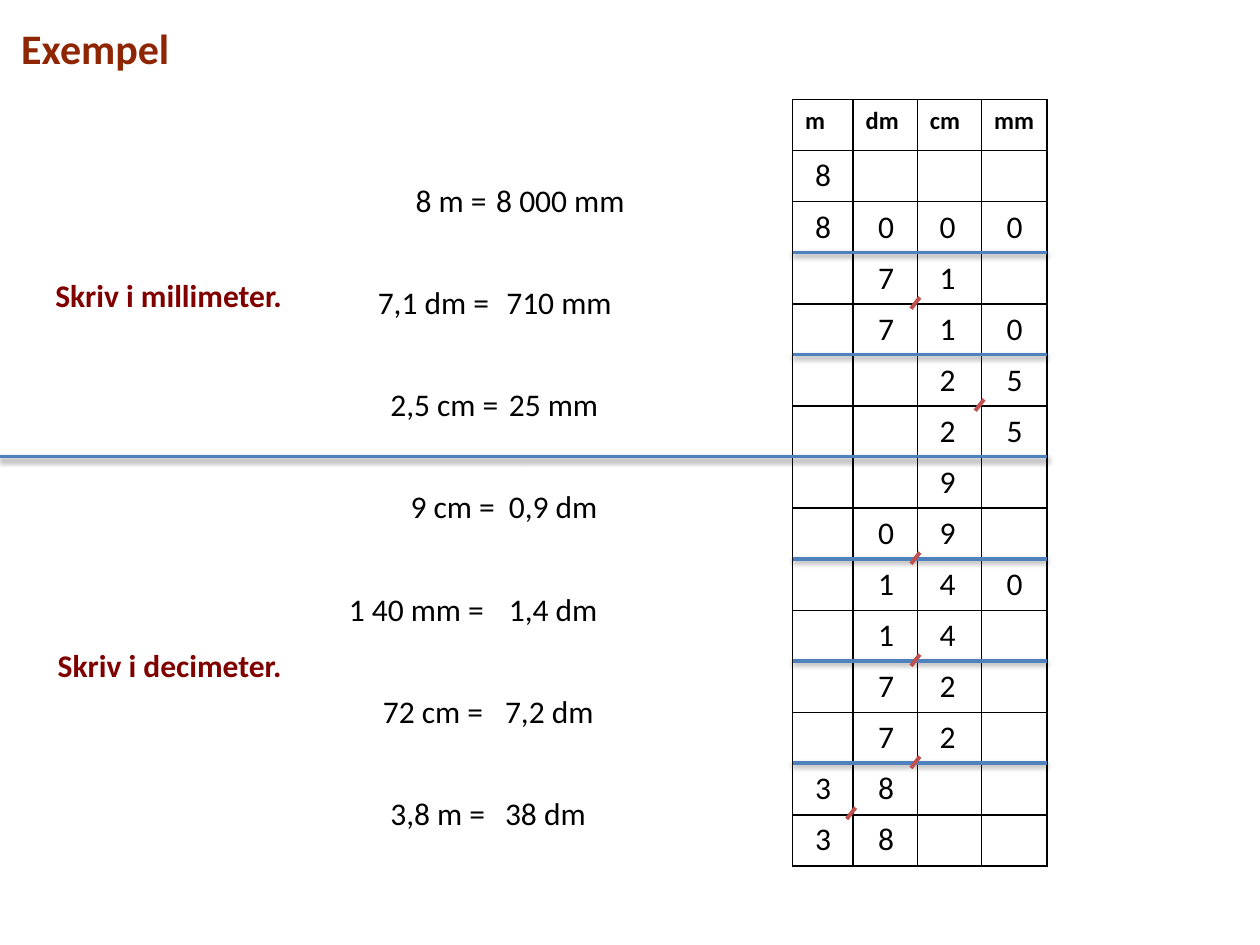
from itertools import accumulate

from pptx import Presentation
from pptx.dml.color import RGBColor
from pptx.enum.shapes import MSO_CONNECTOR as CONNECTOR
from pptx.enum.text import MSO_AUTO_SIZE as AUTO_SIZE
from pptx.oxml import parse_xml
from pptx.oxml.ns import nsdecls
from pptx.util import Inches, Pt

FONT = "Calibri"
BLACK, WHITE, BLUE, RED = "000000", "FFFFFF", "4F81BD", "C0504D"
TITLE_COLOR, TASK_COLOR = "8E2503", "800000"
UNITS = ["m", "dm", "cm", "mm"]
COLUMN_WIDTHS = [0.48, 0.51, 0.51, 0.52]
DIGIT_OFFSETS = [0.08, 0.58, 1.07, 1.6]
ROW_HEIGHT = 0.405
DIGIT_ROWS = ["8   ", "8000", " 71 ", " 710", "  25", "  25", "  9 ",
              " 09 ", " 140", " 14 ", " 72 ", " 72 ", "38  ", "38  "]
COMMAS = [(4, 2), (6, 3), (9, 2), (11, 2), (13, 2), (14, 1)]
SEPARATOR_ROWS = [3, 5, 7, 9, 11, 13]
MIDDLE_ROW = 7
EQUATION_STEP = 0.81
EQUATIONS = [
    ("8 m =", 0.53, 0.8, "8 000 mm", 1.17, 1.23),
    ("7,1 dm =", 0.23, 1.09, "710 mm", 1.25, 1.05),
    ("2,5 cm =", 0.33, 1.07, "25 mm", 1.27, 0.92),
    ("9 cm =", 0.49, 0.88, "0,9 dm", 1.27, 0.91),
    ("1 40 mm =", 0, 1.29, "1,4 dm", 1.27, 0.91),
    ("72 cm =", 0.27, 1.01, "7,2 dm", 1.24, 0.91),
    ("3,8 m =", 0.33, 0.96, "38 dm", 1.24, 0.85),
]


def color(hex_string):
    """Turn a hex string into a colour."""
    return RGBColor.from_string(hex_string)


def write(paragraph, text, size=18, bold=False, font_color=BLACK):
    """Add a formatted run to a paragraph."""
    run = paragraph.add_run()
    run.text = text
    formats = {"name": FONT, "size": Pt(size), "bold": bold}
    for name, value in formats.items():
        setattr(run.font, name, value)
    run.font.color.rgb = color(font_color)


def add_text(slide, text, left, top, width, height=0.4, wrap=False, **style):
    """Place one line of text."""
    box = slide.shapes.add_textbox(*map(Inches, (left, top, width, height)))
    frame = box.text_frame
    formats = {"word_wrap": wrap, "auto_size": AUTO_SIZE.SHAPE_TO_FIT_TEXT}
    for name, value in formats.items():
        setattr(frame, name, value)
    write(frame.paragraphs[0], text, **style)


def add_line(slide, start, end, line_color, width, shadow=False):
    """Draw a straight line, with a soft shadow below it if asked."""
    line = slide.shapes.add_connector(
        CONNECTOR.STRAIGHT, *map(Inches, (*start, *end)))
    line.line.color.rgb = color(line_color)
    line.line.width = Pt(width)
    effect = (
        '<a:outerShdw blurRad="40000" dist="20000" dir="5400000" rotWithShape="0">'
        '<a:srgbClr val="000000"><a:alpha val="38000"/></a:srgbClr>'
        '</a:outerShdw>') if shadow else ""
    properties = line._element.spPr
    properties.append(parse_xml(
        f'<a:effectLst {nsdecls("a")}>{effect}</a:effectLst>'))


def format_cell(cell):
    """Give a cell a white fill and thin black borders."""
    properties = cell._tc.get_or_add_tcPr()
    for side in ("lnL", "lnR", "lnT", "lnB"):
        properties.append(parse_xml(
            f'<a:{side} {nsdecls("a")} w="12700"><a:solidFill>'
            f'<a:srgbClr val="{BLACK}"/></a:solidFill></a:{side}>'))
    cell.fill.solid()
    cell.fill.fore_color.rgb = color(WHITE)


def add_unit_table(slide, left, top, width):
    """Draw the empty grid with its unit headings."""
    row_count = len(DIGIT_ROWS) + 1
    frame = slide.shapes.add_table(
        row_count, len(UNITS), Inches(left), Inches(top),
        Inches(width), Inches(row_count * ROW_HEIGHT))
    table = frame.table
    for column, column_width in zip(table.columns, COLUMN_WIDTHS):
        column.width = Inches(column_width)
    for row in table.rows:
        row.height = Inches(ROW_HEIGHT)
    for cell in table.iter_cells():
        format_cell(cell)
    for cell, unit in zip(table.rows[0].cells, UNITS):
        write(cell.text_frame.paragraphs[0], unit, size=14, bold=True)


def add_unit_marks(slide, left, top, width):
    """Place the separators, decimal commas and digits on the grid."""
    edges = [0, *accumulate(COLUMN_WIDTHS)]
    for row in SEPARATOR_ROWS:
        start = 0 if row == MIDDLE_ROW else left
        y = top + row * ROW_HEIGHT
        add_line(slide, (start, y), (left + width, y), BLUE, 2, shadow=True)
    for row, column in COMMAS:
        x, y = left + edges[column] - 0.01, top + row * ROW_HEIGHT
        add_line(slide, (x + 0.03, y - 0.05), (x - 0.04, y + 0.04), RED, 2.25)
    for row, digits in enumerate(DIGIT_ROWS, start=1):
        for offset, digit in zip(DIGIT_OFFSETS, digits):
            if digit != " ":
                add_text(slide, digit, left + offset,
                         top + row * ROW_HEIGHT - 0.01, 0.29, wrap=True)


def add_equations(slide, left, top):
    """List the conversions at equal distances."""
    for index, equation in enumerate(EQUATIONS):
        y = top + index * EQUATION_STEP
        for text, offset, width in (equation[:3], equation[3:]):
            add_text(slide, text, left + offset, y, width)


def add_headings(slide, left, top):
    """Place the title and the two tasks."""
    add_text(slide, "Exempel", left, top, 1.39, 0.5,
             size=24, bold=True, font_color=TITLE_COLOR)
    tasks = [("Skriv i millimeter.", 0.27, 2.01, 2.05),
             ("Skriv i decimeter.", 0.29, 4.95, 2.02)]
    for text, x, y, width in tasks:
        add_text(slide, text, left + x, top + y, width,
                 bold=True, font_color=TASK_COLOR)


def main():
    """Build and save the slide."""
    presentation = Presentation()
    presentation.slide_width = Inches(10)
    presentation.slide_height = Inches(7.5)
    slide = presentation.slides.add_slide(presentation.slide_layouts[6])
    grid = {"left": 6.29, "top": 0.79, "width": sum(COLUMN_WIDTHS)}
    add_unit_table(slide, **grid)
    add_unit_marks(slide, **grid)
    add_equations(slide, left=2.67, top=1.39)
    add_headings(slide, left=0.07, top=0.13)
    presentation.save("out.pptx")


if __name__ == "__main__":
    main()
